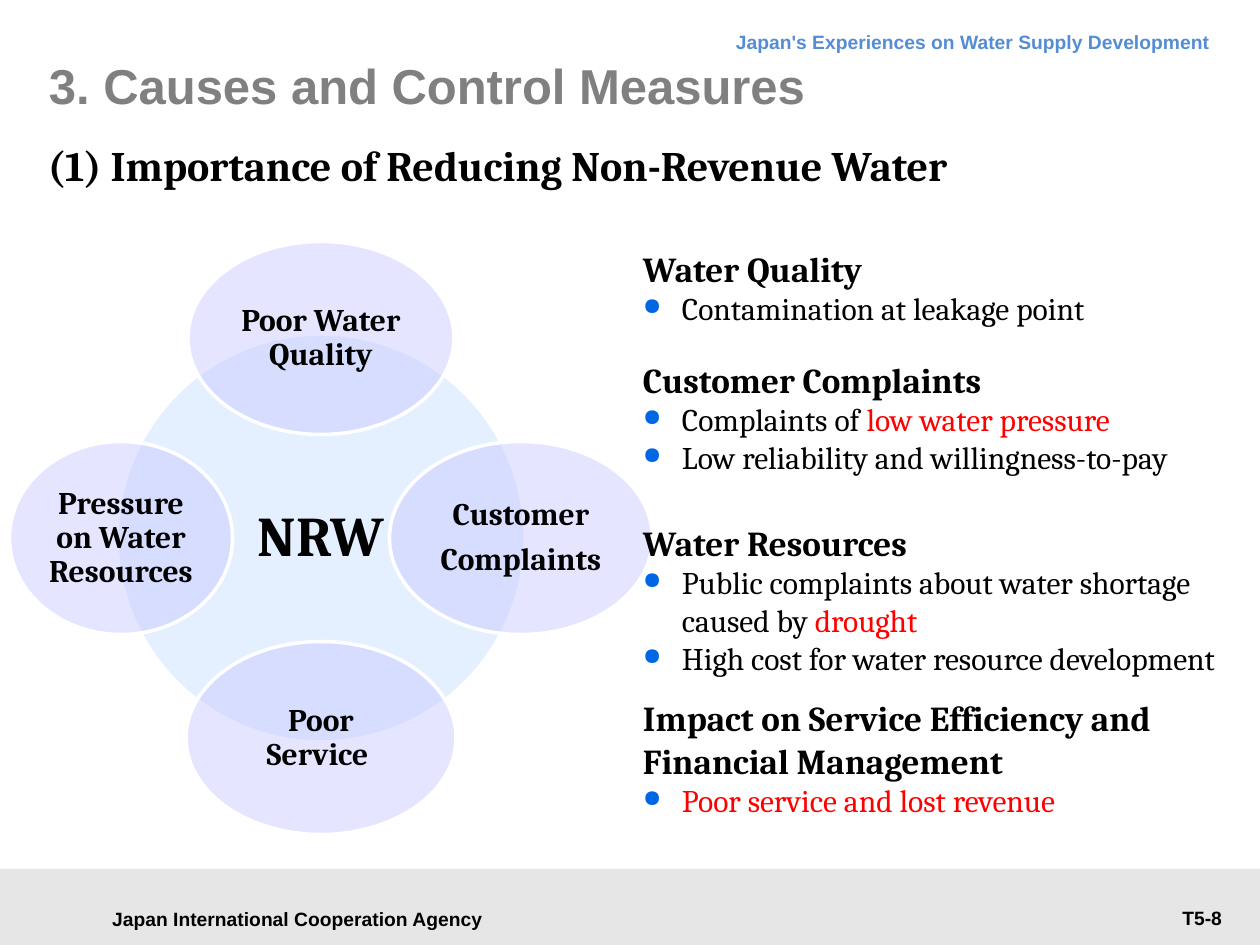
from lxml.etree import SubElement
from pptx import Presentation
from pptx.dml.color import RGBColor
from pptx.enum.shapes import MSO_SHAPE
from pptx.enum.text import MSO_ANCHOR, PP_ALIGN
from pptx.oxml.ns import qn
from pptx.util import Pt

PX = 914400 / 126
COLORS = {"black": "000000", "white": "FFFFFF", "gray": "808080", "band": "E6E6E6",
          "header": "548DD4", "red": "FF0000", "bullet": "0067E4",
          "hub": "CAE2FF", "petal": "CCCCFF"}


def write(frame, paragraphs, size, font="Cambria", bold=True, color="black",
          align=PP_ALIGN.LEFT, anchor=MSO_ANCHOR.TOP, margins=(13, 6, 13, 6),
          spacing=None, after=0, bullet_size=None):
    """Fill a text frame; a paragraph is a list of (text, color) spans or a string.

    With bullet_size, every paragraph after the first is a plain bulleted line.
    """
    frame.word_wrap = True
    frame.vertical_anchor = anchor
    (frame.margin_left, frame.margin_top,
     frame.margin_right, frame.margin_bottom) = [round(m * PX) for m in margins]
    for index, spans in enumerate(paragraphs):
        para = frame.paragraphs[0] if index == 0 else frame.add_paragraph()
        para.alignment = align
        para.space_after = Pt(after)
        if spacing:
            para.line_spacing = spacing
        bulleted = bullet_size is not None and index > 0
        if bulleted:
            props = para._p.get_or_add_pPr()
            props.set("marL", str(round(39 * PX)))
            props.set("indent", str(round(-39 * PX)))
            tint = SubElement(props, qn("a:buClr"))
            SubElement(tint, qn("a:srgbClr")).set("val", COLORS["bullet"])
            SubElement(props, qn("a:buSzPct")).set("val", "75000")
            SubElement(props, qn("a:buChar")).set("char", "●")
        for text, tone in [(spans, color)] if isinstance(spans, str) else spans:
            span = para.add_run() if "\v" not in text else None
            if span is None:
                para.text = text
                spans_made = para.runs
            else:
                span.text = text
                spans_made = [span]
            for span in spans_made:
                span.font.name = font
                span.font.size = Pt(bullet_size if bulleted else size)
                span.font.bold = bold and not bulleted
                span.font.color.rgb = RGBColor.from_string(COLORS[tone])


def add_figure(kind, left, top, width, height, fill, alpha=None):
    figure = page.shapes.add_shape(kind, *[round(v * PX) for v in (left, top, width, height)])
    figure.shadow.inherit = False
    figure.fill.solid()
    figure.fill.fore_color.rgb = RGBColor.from_string(COLORS[fill])
    if alpha is None:
        figure.line.fill.background()
    else:
        tint = figure._element.spPr.find(qn("a:solidFill"))[0]
        SubElement(tint, qn("a:alpha")).set("val", str(alpha * 1000))
        figure.line.color.rgb = RGBColor.from_string(COLORS["white"])
        figure.line.width = Pt(2)
    return figure


deck = Presentation()
deck.slide_width, deck.slide_height = round(1260 * PX), round(945 * PX)
page = deck.slides.add_slide(deck.slide_layouts[6])

# Footer band
add_figure(MSO_SHAPE.RECTANGLE, 0, 869, 1260, 76, "band")

# Header, footer, title and subtitle
small = dict(size=11, font="Arial")
labels = [
    ((89, 897, 417, 43), "Japan International Cooperation Agency",
     dict(small, align=PP_ALIGN.CENTER, anchor=MSO_ANCHOR.MIDDLE)),
    ((343, 16, 880, 48), "Japan's Experiences on Water Supply Development",
     dict(small, align=PP_ALIGN.RIGHT, color="header", spacing=Pt(18))),
    ((1037, 900, 198, 36), "T5-8", dict(small, align=PP_ALIGN.RIGHT)),
    ((49, 35, 1131, 100), "3. Causes and Control Measures",
     dict(size=28, font="Arial", color="gray", anchor=MSO_ANCHOR.MIDDLE, margins=(0, 0, 0, 0))),
    ((35, 134, 944, 57), "(1) Importance of Reducing Non-Revenue Water",
     dict(size=24, spacing=Pt(32), margins=(13, 0, 0, 0))),
]
for place, text, style in labels:
    box = page.shapes.add_textbox(*[round(v * PX) for v in place])
    write(box.text_frame, [text], **style)

# Hub with four overlapping petals
CENTER_X, CENTER_Y, HUB, REACH, PETAL_HEIGHT = 321, 538, 408, 200, 193
centered = dict(align=PP_ALIGN.CENTER, anchor=MSO_ANCHOR.MIDDLE, spacing=0.9)
hub = add_figure(MSO_SHAPE.OVAL, CENTER_X - HUB / 2, CENTER_Y - HUB / 2, HUB, HUB, "hub", 50)
write(hub.text_frame, ["NRW"], 32, after=11, margins=(5, 5, 5, 5), **centered)

petals = [
    (0, -1, 266, ["Poor Water Quality"]),
    (1, 0, 263, ["Customer", "Complaints"]),
    (0, 1, 270, ["Poor\vService "]),
    (-1, 0, 223, ["Pressure on Water Resources"]),
]
for step_x, step_y, width, lines in petals:
    petal = add_figure(MSO_SHAPE.OVAL, CENTER_X + step_x * REACH - width / 2,
                       CENTER_Y + step_y * REACH - PETAL_HEIGHT / 2,
                       width, PETAL_HEIGHT, "petal", 50)
    write(petal.text_frame, lines, 18, after=6.3, margins=(4, 4, 4, 4), **centered)

# Explanations on the right
topics = [
    (241, 630, 93, ["Water Quality", "Contamination at leakage point"]),
    (352, 621, 131, ["Customer Complaints",
                     [("Complaints of ", "black"), ("low water pressure", "red")],
                     "Low reliability and willingness-to-pay"]),
    (515, 645, 170, ["Water Resources",
                     [("Public complaints about water shortage caused by ", "black"),
                      ("drought", "red")],
                     "High cost for water resource development"]),
    (691, 621, 136, ["Impact on Service Efficiency and Financial Management",
                     [("Poor service and lost revenue", "red")]]),
]
for top, width, height, paragraphs in topics:
    box = page.shapes.add_textbox(*[round(v * PX) for v in (630, top, width, height)])
    write(box.text_frame, paragraphs, 20, bullet_size=18)

deck.save("out.pptx")
